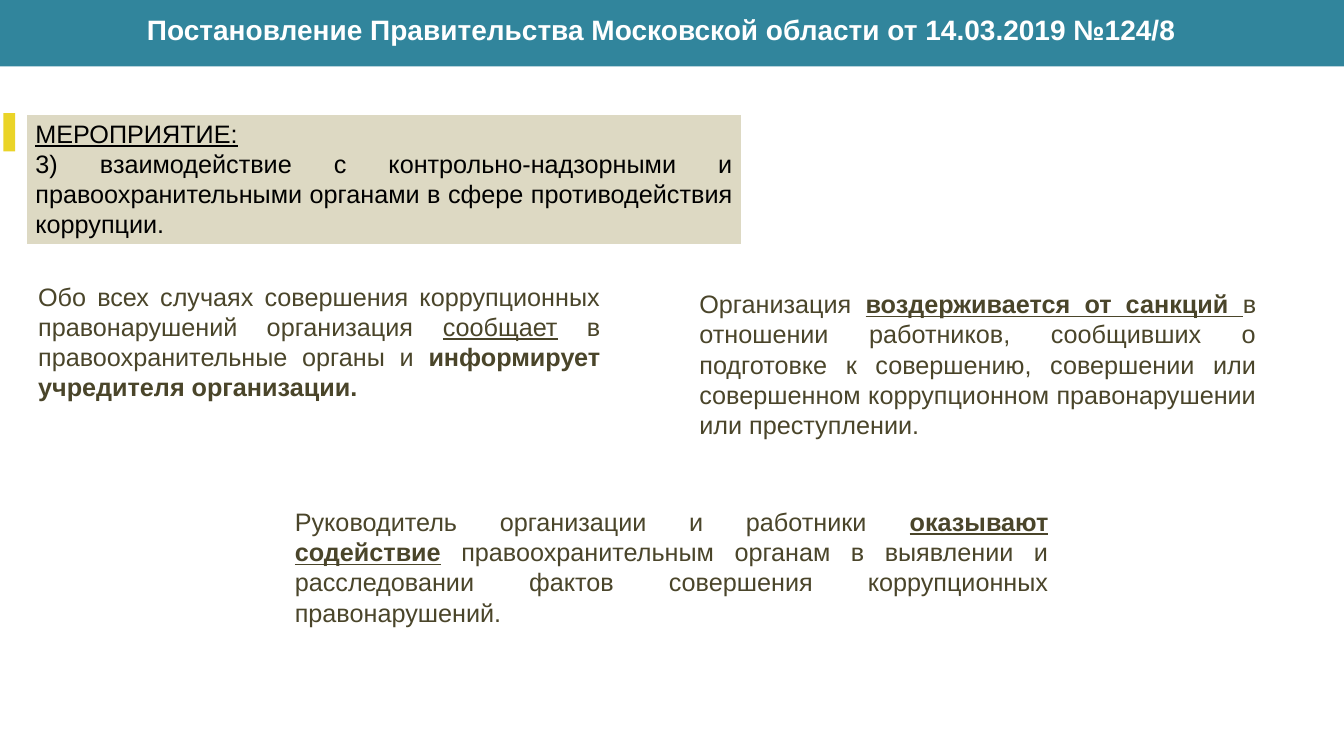
from dataclasses import dataclass

from pptx import Presentation
from pptx import util as u
from pptx.dml.color import RGBColor
from pptx.enum import shapes, text


@dataclass(frozen=True)
class Theme:
    font: str = "Arial"
    title_size: int = 20
    body_size: int = 18
    header: str = "31859C"
    title: str = "FFFFFF"
    card: str = "DDD9C3"
    card_line: str = "FFFFFF"
    card_text: str = "000000"
    body: str = "4A452A"
    marker: str = "EAD428"


@dataclass(frozen=True)
class Box:
    left: float
    top: float
    width: float
    height: float

    def share(self, left, top, width, height):
        return Box(self.left + left * self.width, self.top + top * self.height,
                   width * self.width, height * self.height)

    def emu(self):
        return [u.Inches(v) for v in (self.left, self.top, self.width, self.height)]


THEME = Theme()
PAGE = Box(0, 0, 13.33, 7.5)
COLUMNS, ROWS = 200, 100

DUTIES = [
    ((4.2, 36.5, 86.6, 17.5), [
        ("Обо всех случаях совершения коррупционных правонарушений организация ", ""),
        ("сообщает", "u"),
        (" в правоохранительные органы и ", ""),
        ("информирует учредителя организации.", "b"),
    ]),
    ((102.6, 37.5, 85.8, 21.6), [
        ("Организация ", ""),
        ("воздерживается от санкций ", "bu"),
        ("в отношении работников, сообщивших о подготовке к совершению, совершении "
         "или совершенном коррупционном правонарушении или преступлении.", ""),
    ]),
    ((42.4, 66.3, 115.1, 17.5), [
        ("Руководитель организации и работники ", ""),
        ("оказывают содействие", "bu"),
        (" ", "b"),
        ("правоохранительным органам в выявлении и расследовании фактов совершения "
         "коррупционных правонарушений.", ""),
    ]),
]


def grid(column, row, columns, rows):
    return PAGE.share(column / COLUMNS, row / ROWS, columns / COLUMNS, rows / ROWS)


def add_panel(slide, box, fill):
    panel = slide.shapes.add_shape(shapes.MSO_SHAPE.RECTANGLE, *box.emu())
    panel.shadow.inherit = False
    panel.fill.solid()
    panel.fill.fore_color.rgb = RGBColor.from_string(fill)
    panel.line.fill.background()
    return panel


def write(frame, paragraphs, color, size=THEME.body_size, align=text.PP_ALIGN.JUSTIFY):
    frame.word_wrap = True
    frame.vertical_anchor = text.MSO_ANCHOR.TOP
    for number, runs in enumerate(paragraphs):
        paragraph = frame.add_paragraph() if number else frame.paragraphs[0]
        paragraph.alignment = align
        for words, style in runs:
            run = paragraph.add_run()
            run.text = words
            run.font.name = THEME.font
            run.font.size = u.Pt(size)
            run.font.bold = "b" in style
            run.font.underline = "u" in style
            run.font.color.rgb = RGBColor.from_string(color)


def add_header(slide, box):
    add_panel(slide, box, THEME.header)
    title = slide.shapes.add_textbox(*box.share(0.01, 0.24, 0.97, 0.52).emu()).text_frame
    title.margin_top = title.margin_bottom = u.Inches(0.04)
    write(title, [[("Постановление Правительства Московской области от 14.03.2019 №124/8 ", "b")]],
          THEME.title, THEME.title_size, text.PP_ALIGN.CENTER)
    title.paragraphs[0].line_spacing = 0.75


def add_event(slide, box):
    card = add_panel(slide, box.share(0.03, 0, 0.97, 1), THEME.card)
    card.line.color.rgb = RGBColor.from_string(THEME.card_line)
    card.line.width = u.Pt(2.25)
    write(card.text_frame, [
        [("МЕРОПРИЯТИЕ:", "u")],
        [("3) взаимодействие с контрольно-надзорными и правоохранительными органами "
          "в сфере противодействия коррупции.", "")],
    ], THEME.card_text)
    add_panel(slide, box.share(0, 0, 0.016, 0.29), THEME.marker)


def add_duty(slide, box, runs):
    duty = slide.shapes.add_textbox(*box.emu())
    write(duty.text_frame, [runs], THEME.body)


def main():
    deck = Presentation()
    deck.slide_width, deck.slide_height = u.Inches(PAGE.width), u.Inches(PAGE.height)
    slide = deck.slides.add_slide(deck.slide_layouts[6])
    add_header(slide, grid(0, 0, COLUMNS, 8.8))
    add_event(slide, grid(0.5, 14.95, 110, 17.5))
    for cells, runs in DUTIES:
        add_duty(slide, grid(*cells), runs)
    deck.save("out.pptx")


if __name__ == "__main__":
    main()
